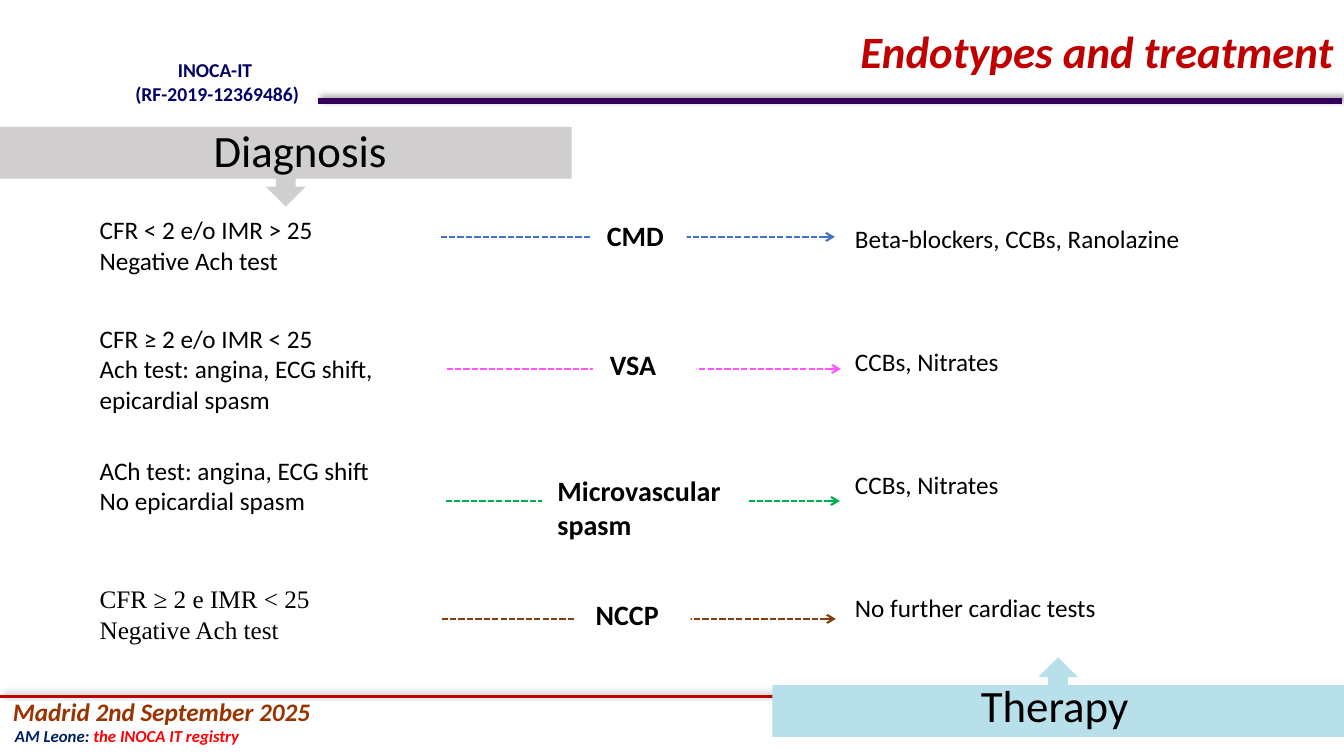
from dataclasses import dataclass
from lxml.etree import SubElement
from pptx import Presentation
from pptx.dml.color import RGBColor
from pptx.enum.dml import MSO_LINE
from pptx.enum.shapes import MSO_CONNECTOR, MSO_SHAPE
from pptx.enum.text import MSO_ANCHOR, MSO_AUTO_SIZE, PP_ALIGN
from pptx.oxml.ns import qn
from pptx.util import Inches, Pt

Box = tuple[float, float, float, float]


@dataclass
class Run:
    text: str
    size: float
    color: str = "000000"
    bold: bool = False
    slant: bool = False
    font: str = "Calibri"


@dataclass
class Row:
    signs: list[str]
    top: float
    start: float
    level: float
    color: str
    patch: Box
    name: list[str]
    label: Box
    cure: str
    font: str = "Calibri"


@dataclass
class Banner:
    text: str
    kind: MSO_SHAPE
    color: str
    box: Box
    label: Box


ROWS = [
    Row(["CFR < 2 e/o IMR > 25", "Negative Ach test"], 2.08, 4.37, 2.35, "4472C4",
        (5.87, 2.08, 0.94, 0.47), ["CMD"], (5.92, 2.12, 0.94, 0.44),
        "Beta-blockers, CCBs, Ranolazine"),
    Row(["CFR ≥ 2 e/o IMR < 25", "Ach test: angina, ECG shift,", "epicardial spasm"],
        3.16, 4.43, 3.66, "FF54FF", (5.88, 3.45, 1.03, 0.55), ["VSA"],
        (5.95, 3.4, 0.85, 0.44), "CCBs, Nitrates"),
    Row(["ACh test: angina, ECG shift", "No epicardial spasm"], 4.47, 4.42, 4.97, "00B050",
        (5.38, 4.64, 2.03, 0.73), ["Microvascular", "spasm"], (5.43, 4.65, 1.95, 0.77),
        "CCBs, Nitrates"),
    Row(["CFR ≥ 2 e IMR < 25", "Negative Ach test"], 5.74, 4.38, 6.14, "843C0B",
        (5.71, 5.83, 1.14, 0.59), ["NCCP"], (5.81, 5.88, 1, 0.44),
        "No further cardiac tests", "Times New Roman"),
]
BANNERS = [
    Banner("Diagnosis", MSO_SHAPE.DOWN_ARROW_CALLOUT, "D0CECE",
           (0, 1.26, 5.67, 0.79), (2.02, 1.17, 3.6, 0.64)),
    Banner("Therapy", MSO_SHAPE.UP_ARROW_CALLOUT, "B8E0EA",
           (7.66, 6.52, 5.67, 0.79), (9.63, 6.67, 3.6, 0.64)),
]

deck = Presentation()
deck.slide_width, deck.slide_height = Inches(13.33), Inches(7.5)
slide = deck.slides.add_slide(deck.slide_layouts[1])
shapes = slide.shapes


def rgb(code: str) -> RGBColor:
    return RGBColor.from_string(code)


def place(shape, box: Box) -> None:
    shape.left, shape.top, shape.width, shape.height = map(Inches, box)


def write(frame, lines: list[list[Run]], align=PP_ALIGN.LEFT) -> None:
    frame.word_wrap = True
    frame.auto_size = MSO_AUTO_SIZE.NONE
    for n, line in enumerate(lines):
        para = frame.add_paragraph() if n else frame.paragraphs[0]
        para.alignment = align
        for item in line:
            run = para.add_run()
            run.text = item.text
            font = run.font
            font.name, font.size = item.font, Pt(item.size)
            font.bold, font.italic = item.bold, item.slant
            font.color.rgb = rgb(item.color)


def add_text(box: Box, lines: list[list[Run]], align=PP_ALIGN.LEFT) -> None:
    write(shapes.add_textbox(*map(Inches, box)).text_frame, lines, align)


def add_block(kind: MSO_SHAPE, box: Box, color: str) -> None:
    block = shapes.add_shape(kind, *map(Inches, box))
    block.shadow.inherit = False
    block.fill.solid()
    block.fill.fore_color.rgb = rgb(color)
    block.line.fill.background()


def add_line(start: float, end: float, level: float, color: str, width: float,
             arrow: bool = False) -> None:
    line = shapes.add_connector(MSO_CONNECTOR.STRAIGHT, Inches(start), Inches(level),
                                Inches(end), Inches(level))
    line.line.color.rgb = rgb(color)
    line.line.width = Pt(width)
    props = line._element.spPr
    if arrow:
        line.line.dash_style = MSO_LINE.SQUARE_DOT
        SubElement(props.find(qn("a:ln")), qn("a:tailEnd"), type="arrow")
    effects = SubElement(props, qn("a:effectLst"))
    if not arrow:
        shade = SubElement(effects, qn("a:outerShdw"), blurRad=str(Pt(4)), dist=str(Pt(3)),
                           dir="18900000", algn="bl", rotWithShape="0")
        tint = SubElement(shade, qn("a:srgbClr"), val="000000")
        SubElement(tint, qn("a:alpha"), val="40000")


def add_title() -> None:
    title = shapes.title
    place(title, (1.83, 0.2, 11.5, 0.67))
    write(title.text_frame, [[Run("Endotypes and treatment", 32, "C00000", True, True)]],
          PP_ALIGN.RIGHT)
    title.text_frame.vertical_anchor = MSO_ANCHOR.MIDDLE
    title.text_frame.paragraphs[0].line_spacing = 0.9


def add_cures() -> None:
    body = slide.placeholders[1]
    place(body, (8.38, 2.2, 4.95, 4.26))
    write(body.text_frame, [[Run(row.cure, 18)] for row in ROWS])
    body.text_frame.vertical_anchor = MSO_ANCHOR.TOP
    for n, para in enumerate(body.text_frame.paragraphs):
        props = para._p.get_or_add_pPr()
        props.set("marL", "0")
        props.set("indent", "0")
        SubElement(props, qn("a:buNone"))
        para.line_spacing = 0.9
        para.space_before = Pt(68.3 if n else 0)


def add_frame() -> None:
    add_line(3.15, 13.31, 1, "32005C", 4)
    add_line(13.33, 0, 6.91, "C00000", 2)
    add_text((0.03, 6.86, 7.5, 0.4),
             [[Run("Madrid 2nd September 2025", 18, "993300", True, True)]])
    add_text((0.05, 7.15, 7.5, 0.3),
             [[Run("AM Leone:", 12, "002060", True, True),
               Run(" the INOCA IT registry", 12, "FF0000", True, True)]])
    add_text((0.96, 0.53, 2.39, 0.6),
             [[Run(text, 14, "000066", True)] for text in ("INOCA-IT ", "(RF-2019-12369486)")],
             PP_ALIGN.CENTER)


def add_banner(item: Banner) -> None:
    add_block(item.kind, item.box, item.color)
    add_text(item.label, [[Run(item.text, 32)]])


def add_row(row: Row) -> None:
    add_text((0.89, row.top, 3.5, 0.41 + 0.3 * (len(row.signs) - 1)),
             [[Run(text, 18, font=row.font)] for text in row.signs])
    add_line(row.start, row.start + 3.91, row.level, row.color, 1.5, True)
    add_block(MSO_SHAPE.ROUNDED_RECTANGLE, row.patch, "FFFFFF")
    add_text(row.label, [[Run(text, 20, bold=True)] for text in row.name])


def main() -> None:
    add_title()
    add_cures()
    add_frame()
    for item in BANNERS:
        add_banner(item)
    for row in ROWS:
        add_row(row)
    deck.save("out.pptx")


if __name__ == "__main__":
    main()
